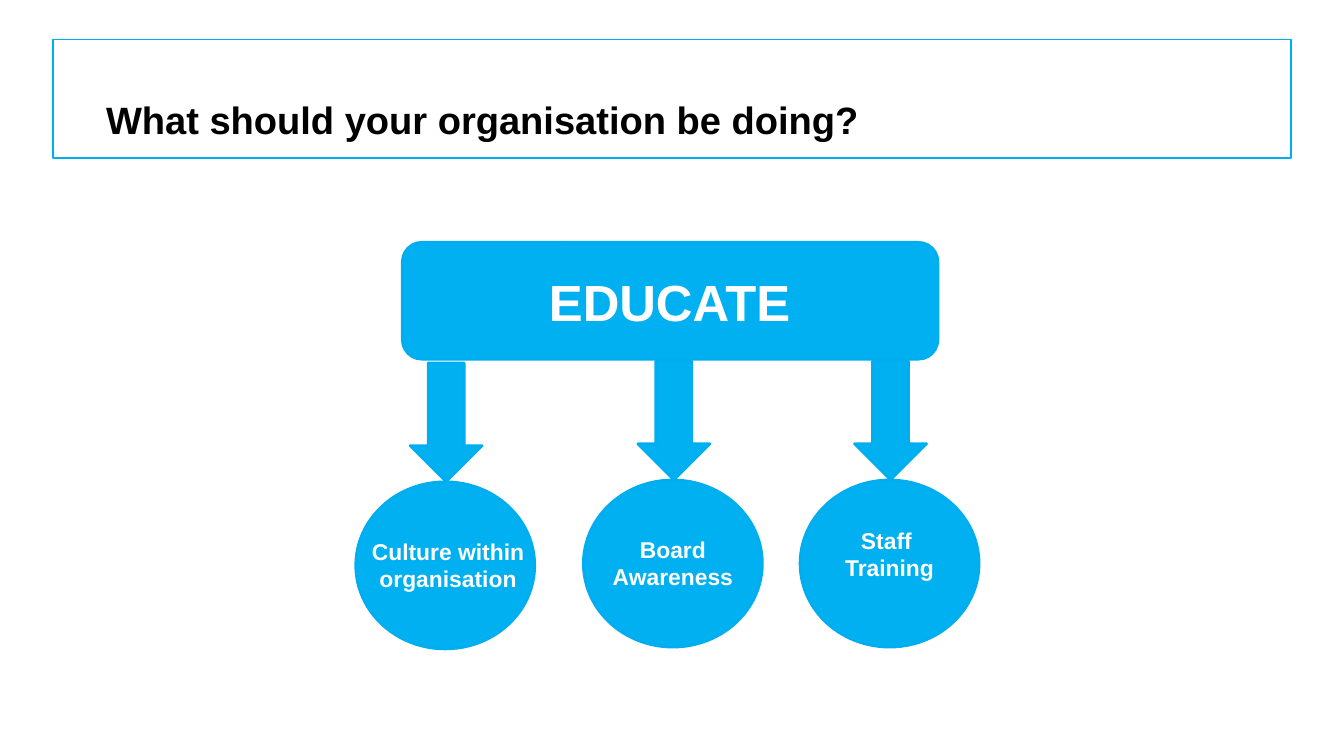
from pptx import Presentation
from pptx.dml.color import RGBColor
from pptx.enum.shapes import MSO_SHAPE as Shape
from pptx.enum.text import MSO_ANCHOR as Anchor, PP_ALIGN as Align
from pptx.util import Inches, Pt

# Content
TITLE = "What should your organisation be doing?"
TOPIC = "EDUCATE"
# Lines of text, column centre, circle top, text top, text width
BRANCHES = [
    (["Culture within organisation"], 4.87, 5.27, 5.83, 2.02),
    (["Board Awareness"], 7.36, 5.25, 5.81, 1.96),
    (["Staff ", "Training"], 9.73, 5.25, 5.71, 1.96),
]

# Style and measures in inches
COLOURS = {"fill": "00B0F0", "line": "00AEEF", "title": "000000", "label": "FFFFFF"}
PAGE_SIZE = (14.7, 8.27)
TITLE_FRAME = (0.58, 0.43, 13.54, 1.3)
TITLE_TEXT = (1.16, 0.43, 10.47, 1.13)
TOPIC_BOX = (4.4, 2.65, 5.86, 1.28)
TOPIC_TEXT = (5.76, 2.91, 3.13, 0.77)
CIRCLE = (1.96, 1.83)
ARROW = (0.79, 1.3)
LABEL_HEIGHT = 0.71


def colour(name):
    return RGBColor.from_string(COLOURS[name])


def add_outline(page, kind, area, fill=True, weight=2):
    shape = page.shapes.add_shape(kind, *map(Inches, area))
    shape.shadow.inherit = False
    if fill:
        shape.fill.solid()
        shape.fill.fore_color.rgb = colour("fill")
    else:
        shape.fill.background()
    shape.line.color.rgb = colour("line")
    shape.line.width = Pt(weight)


def add_text(page, lines, area, size, ink="label", align=Align.CENTER):
    box = page.shapes.add_textbox(*map(Inches, area))
    frame = box.text_frame
    frame.word_wrap = True
    for index, line in enumerate(lines):
        para = frame.paragraphs[0] if index == 0 else frame.add_paragraph()
        para.alignment = align
        span = para.add_run()
        span.text = line
        for key, value in {"name": "Arial", "size": Pt(size), "bold": True}.items():
            setattr(span.font, key, value)
        span.font.color.rgb = colour(ink)
    return frame


def main():
    deck = Presentation()
    deck.slide_width, deck.slide_height = map(Inches, PAGE_SIZE)
    page = deck.slides.add_slide(deck.slide_layouts[6])

    # Framed title
    add_outline(page, Shape.RECTANGLE, TITLE_FRAME, fill=False, weight=1)
    title = add_text(page, [TITLE], TITLE_TEXT, 30, "title", Align.LEFT)
    title.vertical_anchor = Anchor.BOTTOM
    for side in ("left", "top", "right", "bottom"):
        setattr(title, f"margin_{side}", 0)

    # Topic
    add_outline(page, Shape.ROUNDED_RECTANGLE, TOPIC_BOX)
    add_text(page, [TOPIC], TOPIC_TEXT, 40)

    # Branches: arrow, circle and label in each column
    width, height = CIRCLE
    arrow_width, arrow_height = ARROW
    for lines, centre, top, text_top, text_width in BRANCHES:
        left = centre - width / 2
        arrow_left = centre + 0.01 - arrow_width / 2
        add_outline(page, Shape.DOWN_ARROW,
                    (arrow_left, top - arrow_height, arrow_width, arrow_height))
        add_outline(page, Shape.OVAL, (left, top, width, height))
        add_text(page, lines, (left, text_top, text_width, LABEL_HEIGHT), 18)

    deck.save("out.pptx")


if __name__ == "__main__":
    main()
